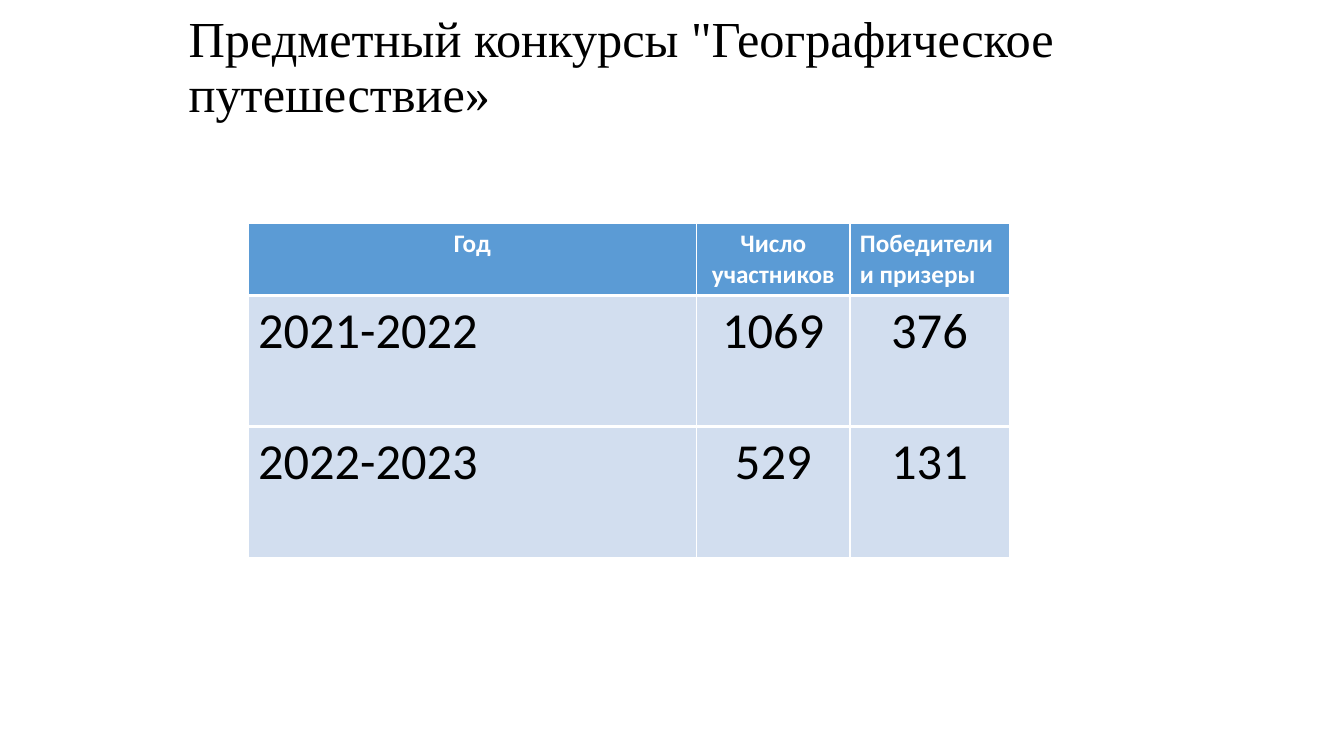
from dataclasses import dataclass

from lxml import etree
from pptx import Presentation, util as u
from pptx.dml.color import RGBColor
from pptx.enum import text
from pptx.oxml import ns

WHITE = RGBColor(0xFF, 0xFF, 0xFF)
BLACK = RGBColor(0x00, 0x00, 0x00)
HEADER_BLUE = RGBColor(0x5B, 0x9B, 0xD5)
ROW_BLUE = RGBColor(0xD2, 0xDE, 0xEF)
LEFT = text.PP_ALIGN.LEFT
CENTER = text.PP_ALIGN.CENTER
COLUMN_WIDTHS = (4.45, 1.52, 1.58)


@dataclass(frozen=True)
class RowStyle:
    height: float
    size: int
    bold: bool
    color: RGBColor
    fill: RGBColor
    alignments: tuple


@dataclass(frozen=True)
class TableRow:
    values: tuple
    style: RowStyle


HEADER = RowStyle(0.7, 18, True, WHITE, HEADER_BLUE, (CENTER, CENTER, LEFT))
BODY = RowStyle(1.3, 36, False, BLACK, ROW_BLUE, (LEFT, CENTER, CENTER))
ROWS = (
    TableRow(("Год", "Число участников", "Победители и призеры"), HEADER),
    TableRow(("2021-2022", "1069", "376"), BODY),
    TableRow(("2022-2023", "529", "131"), BODY),
)


def add_border(cell, side: str, points: int) -> None:
    properties = cell._tc.get_or_add_tcPr()
    line = etree.SubElement(properties, ns.qn(f"a:ln{side}"), w=str(u.Pt(points)))
    fill = etree.SubElement(line, ns.qn("a:solidFill"))
    etree.SubElement(fill, ns.qn("a:srgbClr"), val=str(WHITE))


def format_paragraph(para, font: str, size: int, bold: bool,
                     color: RGBColor, alignment) -> None:
    para.alignment = alignment
    para.font.name = font
    para.font.size = u.Pt(size)
    para.font.bold = bold
    para.font.color.rgb = color


def add_title(page) -> None:
    title = page.shapes.title
    title.left, title.top = u.Inches(1.77), u.Inches(0.32)
    title.width, title.height = u.Inches(11.11), u.Inches(1.45)
    frame = title.text_frame
    frame.text = 'Предметный конкурсы "Географическое путешествие»'
    frame.word_wrap = True
    frame.auto_size = text.MSO_AUTO_SIZE.NONE
    frame.vertical_anchor = text.MSO_ANCHOR.MIDDLE
    frame.margin_bottom = u.Inches(0.78)
    para = frame.paragraphs[0]
    para.line_spacing = 0.9
    format_paragraph(para, "Times New Roman", 36, False, BLACK, LEFT)


def add_results(page) -> None:
    table = page.shapes.add_table(
        len(ROWS), len(COLUMN_WIDTHS), u.Inches(2.46), u.Inches(2.22),
        u.Inches(sum(COLUMN_WIDTHS)),
        u.Inches(sum(row.style.height for row in ROWS))).table
    for column, width in zip(table.columns, COLUMN_WIDTHS):
        column.width = u.Inches(width)
    for index, row in enumerate(ROWS):
        style = row.style
        table.rows[index].height = u.Inches(style.height)
        top = 1 if index == 0 else 3
        bottom = 1 if index == len(ROWS) - 1 else 3
        borders = {"L": 1, "R": 1, "T": top, "B": bottom}
        for cell, value, alignment in zip(
                table.rows[index].cells, row.values, style.alignments):
            for side, points in borders.items():
                add_border(cell, side, points)
            cell.fill.solid()
            cell.fill.fore_color.rgb = style.fill
            cell.text = value
            format_paragraph(cell.text_frame.paragraphs[0], "Calibri",
                             style.size, style.bold, style.color, alignment)


def main() -> None:
    deck = Presentation()
    deck.slide_width, deck.slide_height = u.Inches(13.33), u.Inches(7.5)
    page = deck.slides.add_slide(deck.slide_layouts[5])
    add_title(page)
    add_results(page)
    deck.save("out.pptx")


if __name__ == "__main__":
    main()
